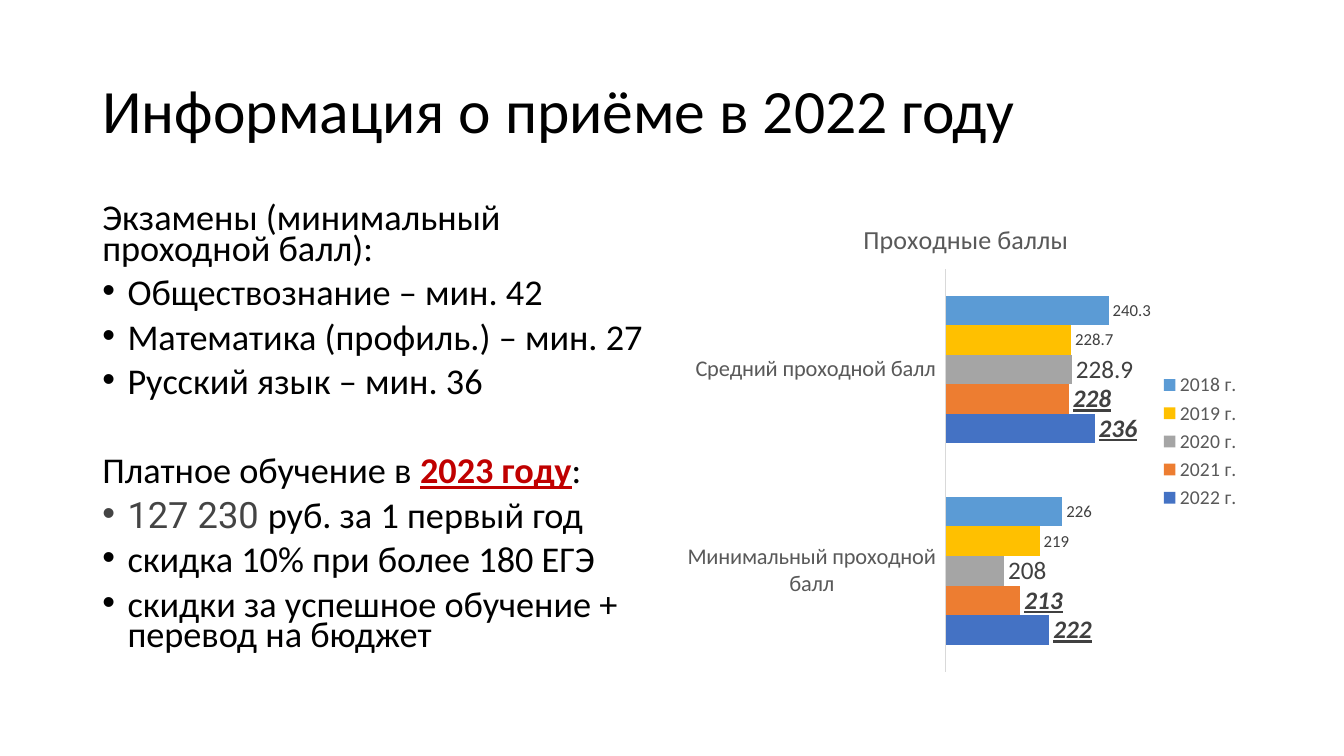
from lxml.etree import SubElement
from pptx import Presentation
from pptx.chart.data import CategoryChartData
from pptx.dml.color import RGBColor
from pptx.enum.chart import XL_CHART_TYPE as ChartType, XL_LABEL_POSITION as LabelPos
from pptx.enum.chart import XL_LEGEND_POSITION as LegendPos, XL_TICK_LABEL_POSITION as TickLabels
from pptx.enum.chart import XL_TICK_MARK as TickMark
from pptx.enum.text import MSO_ANCHOR as Anchor, MSO_AUTO_SIZE as AutoSize, PP_ALIGN as Align
from pptx.oxml.ns import qn
from pptx.util import Pt

COLORS = {
    "text": "000000", "accent": "C00000", "price": "444444",
    "axis text": "595959", "axis line": "D9D9D9", "label": "404040",
}


def style(font, size, color, name="Calibri"):
    font.name = name
    font.size = Pt(size)
    font.color.rgb = RGBColor.from_string(color)


def place(target, left, top, width, height):
    target.left, target.top, target.width, target.height = map(Pt, (left, top, width, height))


prs = Presentation()
prs.slide_width, prs.slide_height = Pt(960), Pt(540)
slide = prs.slides.add_slide(prs.slide_layouts[5])

heading = slide.shapes.title
place(heading, 66, 28.75, 828, 104.4)
heading.text_frame.text = "Информация о приёме в 2022 году"
heading.text_frame.vertical_anchor = Anchor.MIDDLE
heading.text_frame.auto_size = AutoSize.NONE
heading_line = heading.text_frame.paragraphs[0]
heading_line.alignment = Align.LEFT
heading_line.line_spacing = 0.9
style(heading_line.font, 44, COLORS["text"])

admission = slide.shapes.add_textbox(Pt(66), Pt(144), Pt(408), Pt(342.6)).text_frame
admission.word_wrap = True
admission_lines = [
    (False, 10, ["Экзамены (минимальный проходной балл):"]),
    (True, 10, ["Обществознание – мин. 42"]),
    (True, 10, ["Математика (профиль.) – мин. 27"]),
    (True, 10, ["Русский язык – мин. 36"]),
    (False, 41.8, ["Платное обучение в ", "2023 году", ":"]),
    (True, 10, ["127 230 ", "руб. за 1 первый год"]),
    (True, 10, ["скидка 10% при более 180 ЕГЭ"]),
    (True, 10, ["скидки за успешное обучение + перевод на бюджет"]),
]
for index, (bulleted, gap_before, pieces) in enumerate(admission_lines):
    line = admission.add_paragraph() if index else admission.paragraphs[0]
    line.line_spacing = 0.7
    line.space_before = Pt(gap_before)
    if bulleted:
        props = line._p.get_or_add_pPr()
        props.set("marL", str(Pt(18)))
        props.set("indent", str(-Pt(18)))
        SubElement(props, qn("a:buFont")).set("typeface", "Arial")
        SubElement(props, qn("a:buChar")).set("char", "•")
    style(line.font, 25.9, COLORS["text"])
    for piece in pieces:
        run = line.add_run()
        run.text = piece
        if piece == "2023 году":
            run.font.color.rgb = RGBColor.from_string(COLORS["accent"])
            run.font.bold = run.font.underline = True
        elif piece == "127 230 ":
            style(run.font, 25.9, COLORS["price"], "Roboto")

years = [
    ("2022 г.", (222, 236), "4472C4", 18, True),
    ("2021 г.", (213, 228), "ED7D31", 18, True),
    ("2020 г.", (208, 228.9), "A5A5A5", 18, False),
    ("2019 г.", (219, 228.7), "FFC000", 12, False),
    ("2018 г.", (226, 240.3), "5B9BD5", 12, False),
]
scores = CategoryChartData()
scores.categories = ["Минимальный проходной балл", "Средний проходной балл"]
for year, values, *_ in years:
    scores.add_series(year, values)
chart = slide.shapes.add_chart(
    ChartType.BAR_CLUSTERED, Pt(486), Pt(144), Pt(408), Pt(342.6), scores).chart
style(chart.font, 10, COLORS["text"])

chart.has_title = True
chart.chart_title.include_in_layout = False
chart.chart_title.text_frame.text = "Проходные баллы"
title_font = chart.chart_title.text_frame.paragraphs[0].font
style(title_font, 18.6, COLORS["axis text"])
title_font.bold = False

chart.has_legend = True
chart.legend.position = LegendPos.RIGHT
chart.legend.include_in_layout = False
style(chart.legend.font, 14, COLORS["axis text"])

categories = chart.category_axis
categories.major_tick_mark = TickMark.NONE
categories.tick_label_position = TickLabels.LOW
categories.format.line.color.rgb = RGBColor.from_string(COLORS["axis line"])
categories.format.line.width = Pt(0.75)
style(categories.tick_labels.font, 16, COLORS["axis text"])

points = chart.value_axis
points.minimum_scale, points.maximum_scale = 190, 250
points.has_major_gridlines = False
points.visible = False

plot = chart.plots[0]
plot.gap_width = 182
plot.overlap = 0
plot.vary_by_categories = False
for series, (_, _, color, label_size, emphasized) in zip(plot.series, years):
    series.format.fill.solid()
    series.format.fill.fore_color.rgb = RGBColor.from_string(color)
    labels = series.data_labels
    labels.show_value = True
    labels.position = LabelPos.OUTSIDE_END
    style(labels.font, label_size, COLORS["label"])
    labels.font.bold = labels.font.italic = labels.font.underline = emphasized

plot_area = chart._chartSpace.chart.plotArea
for old_layout in plot_area.findall(qn("c:layout")):
    plot_area.remove(old_layout)
layout = SubElement(plot_area, qn("c:layout"))
plot_area.insert(0, layout)
manual = SubElement(layout, qn("c:manualLayout"))
for tag, value in [("layoutTarget", "inner"), ("xMode", "edge"), ("yMode", "edge"),
                   ("x", "0.465"), ("y", "0.14"), ("w", "0.34"), ("h", "0.84")]:
    SubElement(manual, qn(f"c:{tag}")).set("val", value)

prs.save("out.pptx")
